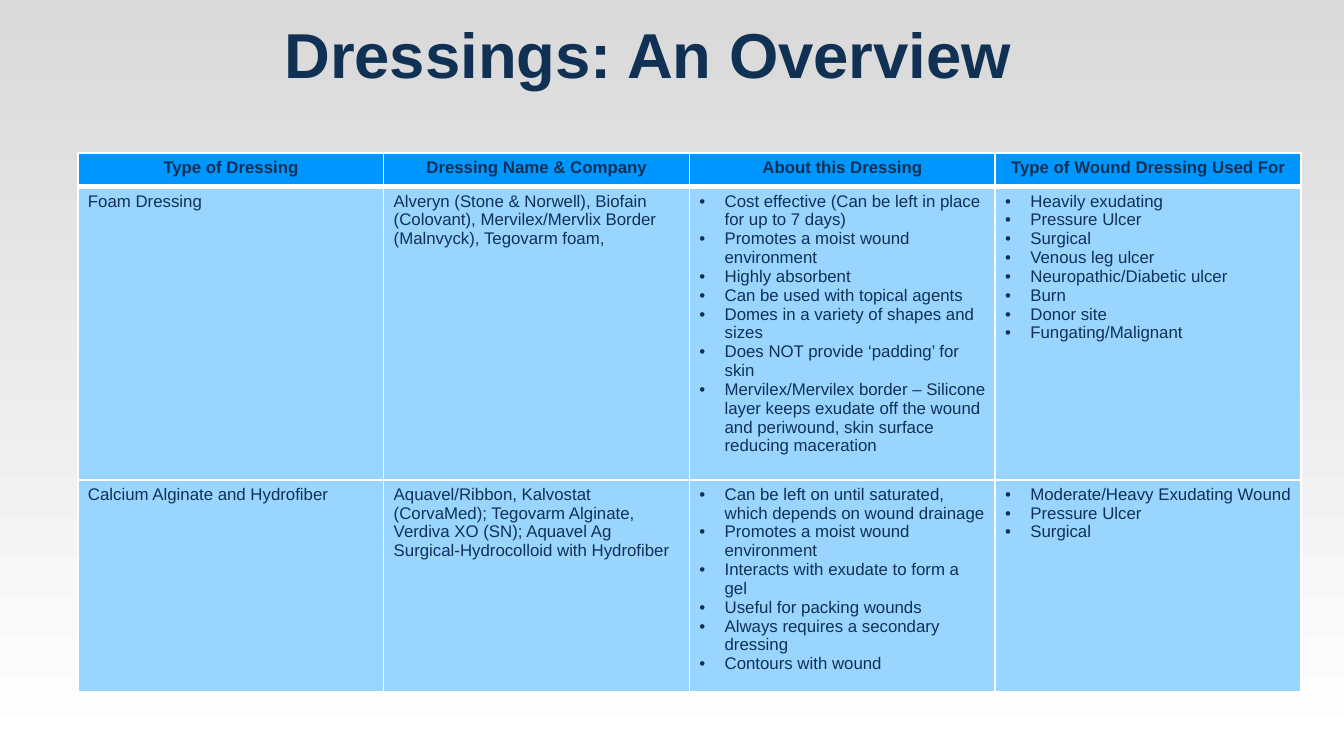
from dataclasses import dataclass

from lxml.etree import SubElement
from pptx import Presentation
from pptx.dml.color import RGBColor as Color
from pptx.enum.text import MSO_ANCHOR as Anchor, PP_ALIGN as Align
from pptx.oxml.ns import qn
from pptx.slide import Slide
from pptx.table import _Cell as Cell
from pptx.text.text import _Paragraph as Paragraph
from pptx.util import Inches, Pt


@dataclass(frozen=True)
class Theme:
    font: str = "Arial"
    ink: str = "103154"
    header: str = "0096FF"
    body: str = "99D5FF"
    border: str = "FFFFFF"
    page_top: str = "D9D9D9"
    page_bottom: str = "FFFFFF"
    title_size: float = 34
    table_size: float = 9
    thin: float = 1
    thick: float = 3


@dataclass(frozen=True)
class Dressing:
    kind: str
    products: str
    features: list[str]
    wounds: list[str]


THEME = Theme()
HEADINGS = ["Type of Dressing", "Dressing Name & Company", "About this Dressing",
            "Type of Wound Dressing Used For"]
DRESSINGS = [
    Dressing(
        "Foam Dressing",
        "Alveryn (Stone & Norwell), Biofain (Colovant), Mervilex/Mervlix Border "
        "(Malnvyck), Tegovarm foam,",
        ["Cost effective (Can be left in place for up to 7 days)",
         "Promotes a moist wound environment",
         "Highly absorbent",
         "Can be used with topical agents",
         "Domes in a variety of shapes and sizes",
         "Does NOT provide ‘padding’ for skin",
         "Mervilex/Mervilex border – Silicone layer keeps exudate off the wound "
         "and periwound, skin surface reducing maceration"],
        ["Heavily exudating", "Pressure Ulcer", "Surgical", "Venous leg ulcer",
         "Neuropathic/Diabetic ulcer", "Burn", "Donor site", "Fungating/Malignant"],
    ),
    Dressing(
        "Calcium Alginate and Hydrofiber",
        "Aquavel/Ribbon, Kalvostat (CorvaMed); Tegovarm Alginate, Verdiva XO (SN); "
        "Aquavel Ag Surgical-Hydrocolloid with Hydrofiber",
        ["Can be left on until saturated, which depends on wound drainage",
         "Promotes a moist wound environment",
         "Interacts with exudate to form a gel",
         "Useful for packing wounds",
         "Always requires a secondary dressing",
         "Contours with wound"],
        ["Moderate/Heavy Exudating Wound", "Pressure Ulcer", "Surgical"],
    ),
]
PAGE_WIDTH = 10
PAGE_HEIGHT = PAGE_WIDTH * 9 / 16
ROW_HEIGHTS = [0.25, 2.17, 1.43]
TABLE_WIDTH = 9.1
INSET_SCALE = 0.75


def add_text(para: Paragraph, text: str, size: float, bold: bool = False) -> None:
    span = para.add_run()
    span.text = text
    span.font.name = THEME.font
    span.font.size = Pt(size)
    span.font.bold = bold
    span.font.color.rgb = Color.from_string(THEME.ink)


def add_bullet(para: Paragraph) -> None:
    indent = Inches(0.25 * INSET_SCALE)
    properties = para._p.get_or_add_pPr()
    properties.set("marL", str(indent))
    properties.set("indent", str(-indent))
    SubElement(properties, qn("a:buFont"), typeface=THEME.font)
    SubElement(properties, qn("a:buChar"), char="•")


def style_cell(cell: Cell, fill: str, top: float, bottom: float) -> None:
    cell.margin_left = cell.margin_right = Inches(0.1 * INSET_SCALE)
    cell.margin_top = cell.margin_bottom = Inches(0.05 * INSET_SCALE)
    properties = cell._tc.get_or_add_tcPr()
    edges = {"L": THEME.thin, "R": THEME.thin, "T": top, "B": bottom}
    for side, width in edges.items():
        line = SubElement(properties, qn(f"a:ln{side}"), w=str(Pt(width)))
        solid = SubElement(line, qn("a:solidFill"))
        SubElement(solid, qn("a:srgbClr"), val=THEME.border)
    cell.fill.solid()
    cell.fill.fore_color.rgb = Color.from_string(fill)


def fill_cell(cell: Cell, content: str | list[str], header: bool) -> None:
    bulleted = isinstance(content, list)
    frame = cell.text_frame
    for index, text in enumerate(content if bulleted else [content]):
        para = frame.add_paragraph() if index else frame.paragraphs[0]
        para.alignment = Align.CENTER if header else Align.LEFT
        if bulleted:
            add_bullet(para)
        add_text(para, text, THEME.table_size, header)


def paint_background(page: Slide) -> None:
    fill = page.background.fill
    fill.gradient()
    fill.gradient_angle = 90
    for stop, color in zip(fill.gradient_stops, [THEME.page_bottom, THEME.page_top]):
        stop.color.rgb = Color.from_string(color)


def add_title(page: Slide, text: str) -> None:
    box = page.shapes.add_textbox(Inches(0.51), Inches(0.06), Inches(8.62), Inches(1.09))
    frame = box.text_frame
    frame.word_wrap = True
    frame.vertical_anchor = Anchor.TOP
    para = frame.paragraphs[0]
    para.alignment = Align.CENTER
    add_text(para, text, THEME.title_size, True)


def add_dressing_table(page: Slide) -> None:
    rows = [HEADINGS] + [[d.kind, d.products, d.features, d.wounds] for d in DRESSINGS]
    table = page.shapes.add_table(
        len(rows), len(HEADINGS), Inches(0.58), Inches(1.14),
        Inches(TABLE_WIDTH), Inches(sum(ROW_HEIGHTS))).table
    table.horz_banding = False
    for column in table.columns:
        column.width = Inches(TABLE_WIDTH / len(HEADINGS))
    for row_index, (contents, height) in enumerate(zip(rows, ROW_HEIGHTS)):
        table.rows[row_index].height = Inches(height)
        header = row_index == 0
        fill = THEME.header if header else THEME.body
        top = THEME.thick if row_index == 1 else THEME.thin
        bottom = THEME.thick if header else THEME.thin
        for column_index, content in enumerate(contents):
            cell = table.cell(row_index, column_index)
            style_cell(cell, fill, top, bottom)
            fill_cell(cell, content, header)


def main() -> None:
    deck = Presentation()
    deck.slide_width, deck.slide_height = Inches(PAGE_WIDTH), Inches(PAGE_HEIGHT)
    page = deck.slides.add_slide(deck.slide_layouts[6])
    paint_background(page)
    add_title(page, "Dressings: An Overview")
    add_dressing_table(page)
    deck.save("out.pptx")


if __name__ == "__main__":
    main()
